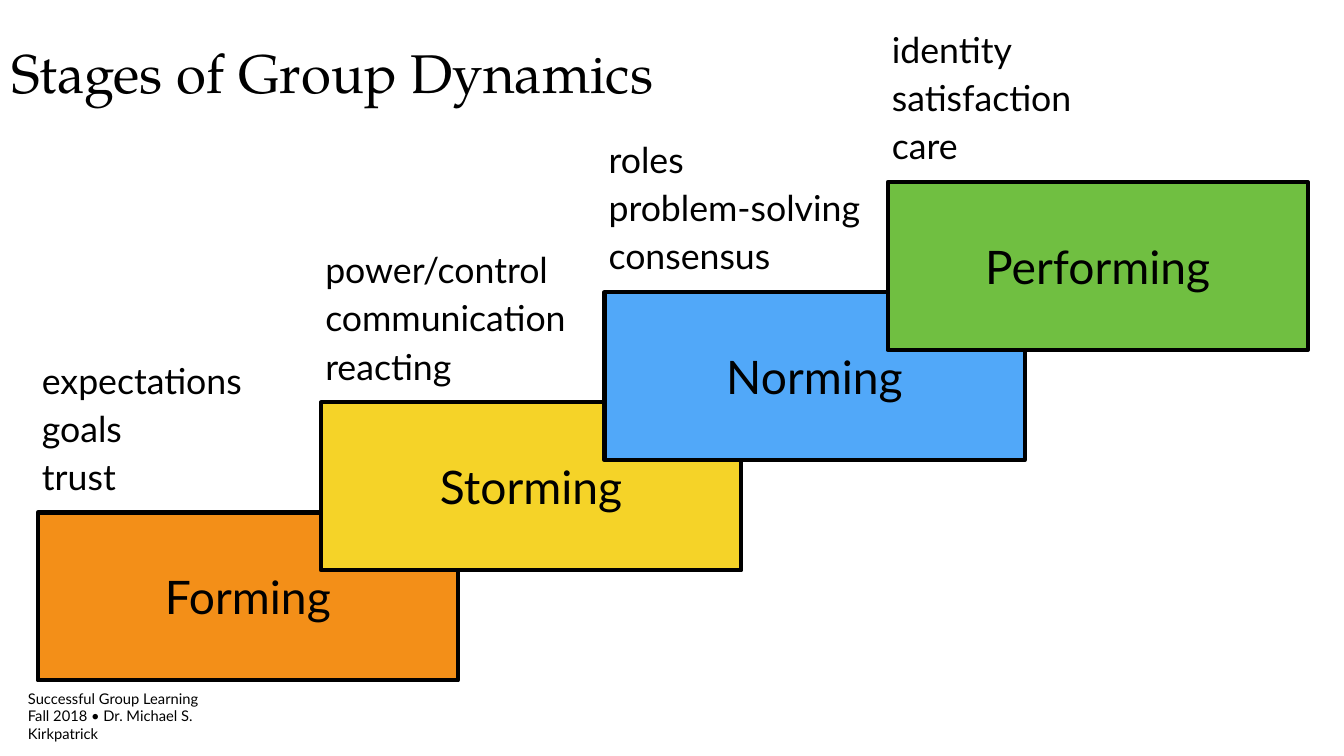
from dataclasses import dataclass
from pptx import Presentation
from pptx import util as u
from pptx.dml.color import RGBColor
from pptx.enum import shapes, text


@dataclass
class Theme:
    ink: str = "000000"
    paper: str = "FFFFFF"
    fills: tuple = ("F38F18", "F5D328", "51A8F9", "70BF41")
    body: str = "Lato"
    serif: str = "TeX Gyre Pagella"
    title: int = 52
    stage: int = 44
    trait: int = 34
    foot: int = 14


theme = Theme()


def write(shape, words, size, font, anchor, align=text.PP_ALIGN.LEFT, gap=0):
    frame = shape.text_frame
    frame.text = words
    frame.vertical_anchor = anchor
    frame.word_wrap = True
    frame.margin_left = frame.margin_right = u.Cm(0.1)
    frame.margin_top = frame.margin_bottom = u.Cm(0.1)
    for i, para in enumerate(frame.paragraphs):
        para.alignment = align
        para.space_before = u.Pt(gap if i else 0)
        for run in para.runs:
            run.font.name = font
            run.font.size = u.Pt(size)
            run.font.color.rgb = RGBColor.from_string(theme.ink)


deck = Presentation()
deck.slide_width = u.Cm(45.16)
deck.slide_height = u.Cm(25.4)
slide = deck.slides.add_slide(deck.slide_layouts[6])
slide.background.fill.solid()
slide.background.fill.fore_color.rgb = RGBColor.from_string(theme.paper)
top, middle = text.MSO_ANCHOR.TOP, text.MSO_ANCHOR.MIDDLE

foot = slide.shapes.add_textbox(u.Cm(0.84), u.Cm(23.29), u.Cm(8.23), u.Cm(1.52))
write(foot, "Successful Group Learning\nFall 2018 • Dr. Michael S. Kirkpatrick",
      theme.foot, theme.body, middle)
foot.text_frame.word_wrap = False

title = slide.shapes.add_textbox(u.Cm(0.3), u.Cm(1.02), u.Cm(28.73), u.Cm(2.79))
write(title, "Stages of Group Dynamics", theme.title, theme.serif, middle)

stages = [
    ("Forming", "expectations\ngoals\ntrust", 7.37),
    ("Storming", "power/control\ncommunication\nreacting", 8.79),
    ("Norming", "roles\nproblem-solving\nconsensus", 9.27),
    ("Performing", "identity\nsatisfaction\ncare", 6.5),
]

for i, (name, traits, width) in enumerate(stages):
    x, y = 1.27 + 9.52 * i, 17.22 - 3.7 * i
    box = slide.shapes.add_shape(shapes.MSO_SHAPE.RECTANGLE,
                                 u.Cm(x), u.Cm(y), u.Cm(14.12), u.Cm(5.64))
    box.shadow.inherit = False
    box.fill.solid()
    box.fill.fore_color.rgb = RGBColor.from_string(theme.fills[i])
    box.line.color.rgb = RGBColor.from_string(theme.ink)
    box.line.width = u.Pt(4)
    write(box, name, theme.stage, theme.body, middle, text.PP_ALIGN.CENTER)

    note = slide.shapes.add_textbox(u.Cm(x + 0.04), u.Cm(y - 5.28), u.Cm(width), u.Cm(5.41))
    write(note, traits, theme.trait, theme.body, top, gap=5)

deck.save("out.pptx")
